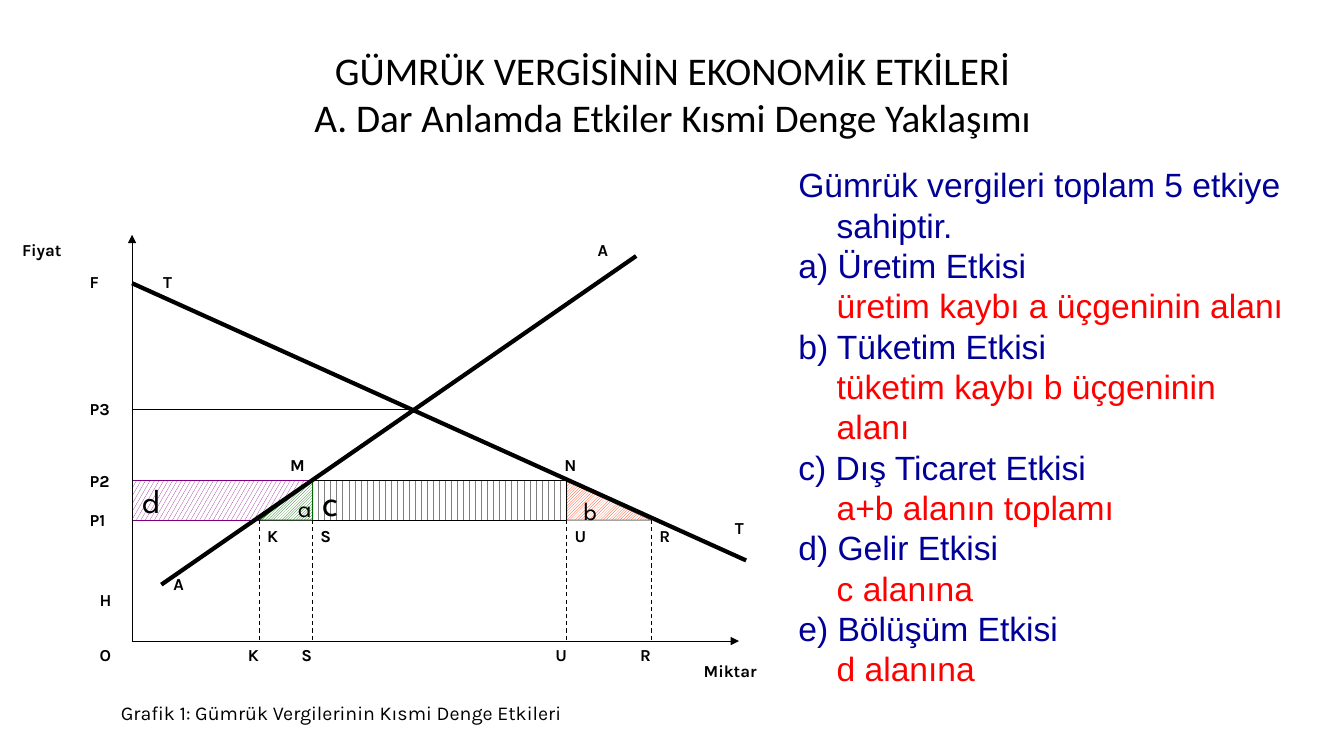
from pptx import Presentation
from pptx.dml.color import RGBColor
from pptx.enum.dml import MSO_LINE, MSO_PATTERN as PATTERN
from pptx.enum.shapes import MSO_CONNECTOR, MSO_SHAPE as SHAPE
from pptx.enum.text import MSO_ANCHOR, PP_ALIGN
from pptx.oxml.ns import qn
from pptx.util import Inches, Pt
from lxml import etree

BLACK, BLUE, RED = "000000", "000099", "FF0000"
AXIS_X, AXIS_Y = 1.31, 6.36
P1_Y, P2_Y, P3_Y = 5.16, 4.77, 4.06
QUANTITIES = {"K": 2.57, "S": 3.1, "U": 5.62, "R": 6.46}

LABELS = [
    ("Fiyat", 0.12, 2.33), ("Miktar", 6.88, 6.51),
    ("F", 0.79, 2.65), ("P3", 0.79, 3.91), ("P2", 0.79, 4.62),
    ("P1", 0.79, 5.01), ("H", 0.89, 5.8), ("O", 0.89, 6.35),
    ("A", 5.83, 2.33), ("A", 1.62, 5.64),
    ("T", 1.52, 2.65), ("T", 7.19, 5.09),
    ("M", 2.78, 4.46), ("N", 5.5, 4.46),
]

EFFECTS = [
    ("a) Üretim Etkisi", "üretim kaybı a üçgeninin alanı"),
    ("b) Tüketim Etkisi", "tüketim kaybı b üçgeninin alanı"),
    ("c) Dış Ticaret Etkisi", "a+b alanın toplamı"),
    ("d) Gelir Etkisi", "c alanına"),
    ("e) Bölüşüm Etkisi", "d alanına"),
]


def rgb(value):
    return RGBColor.from_string(value)


def style(p, size, name, color=BLACK, bold=False):
    p.font.size = Pt(size)
    p.font.name = name
    p.font.bold = bold
    p.font.color.rgb = rgb(color)


def add_box(slide, x, y, w, h):
    box = slide.shapes.add_textbox(Inches(x), Inches(y), Inches(w), Inches(h))
    box.text_frame.word_wrap = True
    return box.text_frame


def add_title(slide, text):
    tf = add_box(slide, 0.67, 0.3, 12, 1.25)
    tf.vertical_anchor = MSO_ANCHOR.MIDDLE
    p = tf.paragraphs[0]
    p.text = text
    p.alignment = PP_ALIGN.CENTER
    style(p, 28, "Calibri")


def add_label(slide, text, x, y, w=0.75, h=0.3, size=12, bold=True):
    p = add_box(slide, x, y, w, h).paragraphs[0]
    p.text = text
    style(p, size, "Karla", bold=bold)


def add_line(slide, start, end, width=0.75, dashed=False, arrow=False):
    points = [Inches(v) for v in (*start, *end)]
    line = slide.shapes.add_connector(MSO_CONNECTOR.STRAIGHT, *points)
    line.line.color.rgb = rgb(BLACK)
    line.line.width = Pt(width)
    if dashed:
        line.line.dash_style = MSO_LINE.DASH
    if arrow:
        ln = line.line._get_or_add_ln()
        etree.SubElement(ln, qn("a:tailEnd"), type="triangle")
    etree.SubElement(line.element.spPr, qn("a:effectLst"))


def add_area(slide, kind, text, size, box, pattern, color, edge):
    """Add a hatched region of the graph with its letter."""
    sp = slide.shapes.add_shape(kind, *[Inches(v) for v in box])
    sp.shadow.inherit = False
    sp.fill.patterned()
    sp.fill.pattern = pattern
    sp.fill.fore_color.rgb = rgb(color)
    sp.fill.back_color.rgb = rgb("FFFFFF")
    sp.line.color.rgb = rgb(edge)
    sp.line.width = Pt(0.75)
    tf = sp.text_frame
    tf.word_wrap = False
    tf.vertical_anchor = MSO_ANCHOR.MIDDLE
    p = tf.paragraphs[0]
    p.text = text
    p.alignment = PP_ALIGN.LEFT
    style(p, size, "League Spartan")
    return sp


def add_areas(slide):
    k, s, u, r = QUANTITIES.values()
    h = P1_Y - P2_Y
    add_area(slide, SHAPE.RECTANGLE, "d", 24, (AXIS_X, P2_Y, s - AXIS_X, h),
             PATTERN.LARGE_CONFETTI, "800080", "800080")
    add_area(slide, SHAPE.RIGHT_TRIANGLE, "b", 18, (u, P2_Y, r - u, h),
             PATTERN.LIGHT_UPWARD_DIAGONAL, "FF3300", "777777")
    add_area(slide, SHAPE.RECTANGLE, "c", 28, (s, P2_Y, u - s, h),
             PATTERN.DASHED_VERTICAL, "808080", BLACK)
    # Turned a quarter, so width and height swap around the same centre.
    w = s - k
    box = ((k + s - h) / 2, (P1_Y + P2_Y - w) / 2, h, w)
    a = add_area(slide, SHAPE.RIGHT_TRIANGLE, "a", 18, box,
                 PATTERN.LIGHT_UPWARD_DIAGONAL, "006600", "006600")
    a.rotation = 270
    a.element.txBody.bodyPr.set("vert", "eaVert")


def add_graph(slide):
    add_areas(slide)
    add_line(slide, (AXIS_X, AXIS_Y), (7.33, AXIS_Y), arrow=True)
    add_line(slide, (AXIS_X, AXIS_Y), (AXIS_X, 2.33), arrow=True)
    add_line(slide, (1.6, 5.8), (6.31, 2.54), width=3)
    add_line(slide, (AXIS_X, 2.81), (7.4, 5.56), width=3)
    add_line(slide, (4.04, P3_Y), (AXIS_X, P3_Y))
    for name, x in QUANTITIES.items():
        add_line(slide, (x, P1_Y), (x, AXIS_Y), dashed=True)
        add_label(slide, name, x - 0.02, 5.17)
        add_label(slide, name, x - 0.21, 6.35)
    for label in LABELS:
        add_label(slide, *label)
    add_label(slide, "Grafik 1: Gümrük Vergilerinin Kısmi Denge Etkileri",
              1.1, 6.9, w=6.09, h=0.33, size=14, bold=False)


def add_effects(slide):
    tf = add_box(slide, 7.82, 1.58, 5.04, 5.35)
    lines = [("Gümrük vergileri toplam 5 etkiye sahiptir.", BLUE, -0.38)]
    for effect, area in EFFECTS:
        lines += [(effect, BLUE, -0.38), (area, RED, 0)]
    for i, (text, color, indent) in enumerate(lines):
        p = tf.add_paragraph() if i else tf.paragraphs[0]
        p.text = text
        style(p, 24, "Arial", color)
        pPr = p._p.get_or_add_pPr()
        pPr.set("marL", str(Inches(0.38)))
        pPr.set("indent", str(Inches(indent)))


def main():
    prs = Presentation()
    prs.slide_width, prs.slide_height = Inches(13.33), Inches(7.5)
    slide = prs.slides.add_slide(prs.slide_layouts[6])
    add_title(slide, "GÜMRÜK VERGİSİNİN EKONOMİK ETKİLERİ\v"
                     "A. Dar Anlamda Etkiler Kısmi Denge Yaklaşımı")
    add_graph(slide)
    add_effects(slide)
    prs.save("out.pptx")


if __name__ == "__main__":
    main()
